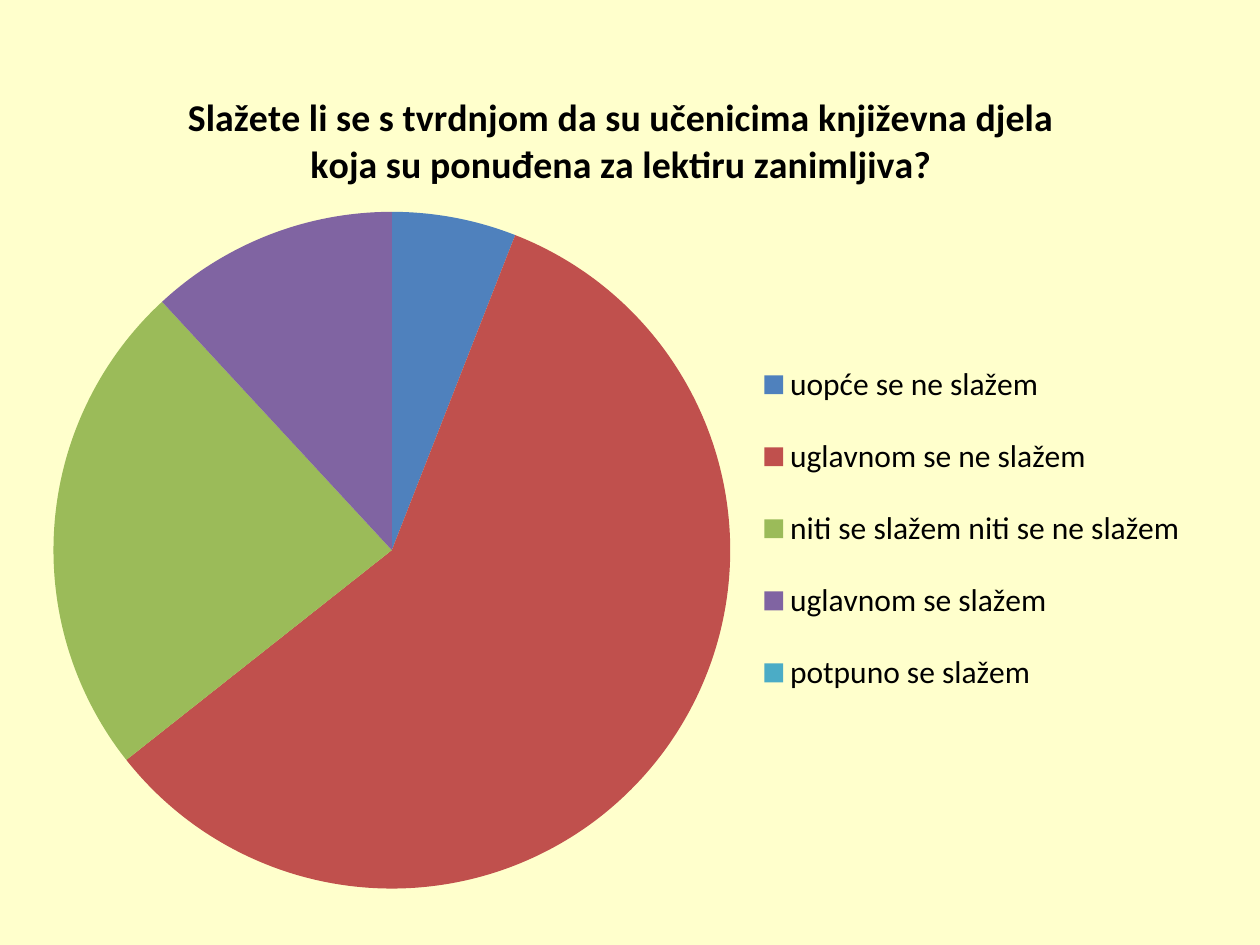
import pptx
import pptx.chart.data
import pptx.dml.color
import pptx.enum.chart
import pptx.oxml
import pptx.oxml.ns
import pptx.util
from pptx.util import Cm

QUESTION = ("Slažete li se s tvrdnjom da su učenicima književna djela "
            "koja su ponuđena za lektiru zanimljiva?")
ANSWERS = [
    ("uopće se ne slažem", 6, "4F81BD"),
    ("uglavnom se ne slažem", 59, "C0504D"),
    ("niti se slažem niti se ne slažem", 24, "9BBB59"),
    ("uglavnom se slažem", 12, "8064A2"),
    ("potpuno se slažem", 0, "4BACC6"),
]


def paint(fill, color):
    fill.solid()
    fill.fore_color.rgb = pptx.dml.color.RGBColor.from_string(color)


def place(part, index, values):
    """Give a chart part a manual layout, in fractions of the chart."""
    for old in part.findall(pptx.oxml.ns.qn("c:layout")):
        part.remove(old)
    target = '<c:layoutTarget val="inner"/>' if index == 0 else ""
    modes = '<c:xMode val="edge"/><c:yMode val="edge"/>'
    sizes = "".join(f'<c:{k} val="{v}"/>' for k, v in values.items())
    part.insert(index, pptx.oxml.parse_xml(
        f'<c:layout {pptx.oxml.ns.nsdecls("c")}><c:manualLayout>'
        f'{target}{modes}{sizes}</c:manualLayout></c:layout>'))


prs = pptx.Presentation()
prs.slide_width, prs.slide_height = Cm(25.4), Cm(19.05)
s = prs.slides.add_slide(prs.slide_layouts[6])
paint(s.background.fill, "FFFFCC")

data = pptx.chart.data.CategoryChartData()
data.categories = [name for name, value, color in ANSWERS]
data.add_series(QUESTION, [value for name, value, color in ANSWERS])
chart = s.shapes.add_chart(pptx.enum.chart.XL_CHART_TYPE.PIE, Cm(0.58), Cm(0.99),
                           Cm(23.62), Cm(17.27), data).chart

chart.has_title = True
tf = chart.chart_title.text_frame
tf.text = QUESTION
chart.has_legend = True
chart.legend.position = pptx.enum.chart.XL_LEGEND_POSITION.RIGHT
chart.legend.include_in_layout = False

fonts = [
    (chart.font, {"name": "Calibri", "size": pptx.util.Pt(18)}),
    (chart.legend.font, {"name": "Calibri", "size": pptx.util.Pt(18)}),
    (tf.paragraphs[0].runs[0].font,
     {"name": "Calibri", "size": pptx.util.Pt(21.6), "bold": True}),
]
for font, formats in fonts:
    for key, value in formats.items():
        setattr(font, key, value)
    paint(font.fill, "000000")

plot = chart.plots[0]
plot.vary_by_categories = True
for i, (name, value, color) in enumerate(ANSWERS):
    paint(plot.series[0].points[i].format.fill, color)

place(chart.chart_title._element, 1, {"x": 0.13, "y": 0.04})
place(chart.legend._element, 1, {"x": 0.62, "y": 0.33, "w": 0.37, "h": 0.46})
place(chart._chartSpace.chart.plotArea, 0, {"x": 0.02, "y": 0.19, "w": 0.58, "h": 0.79})

prs.save("out.pptx")
